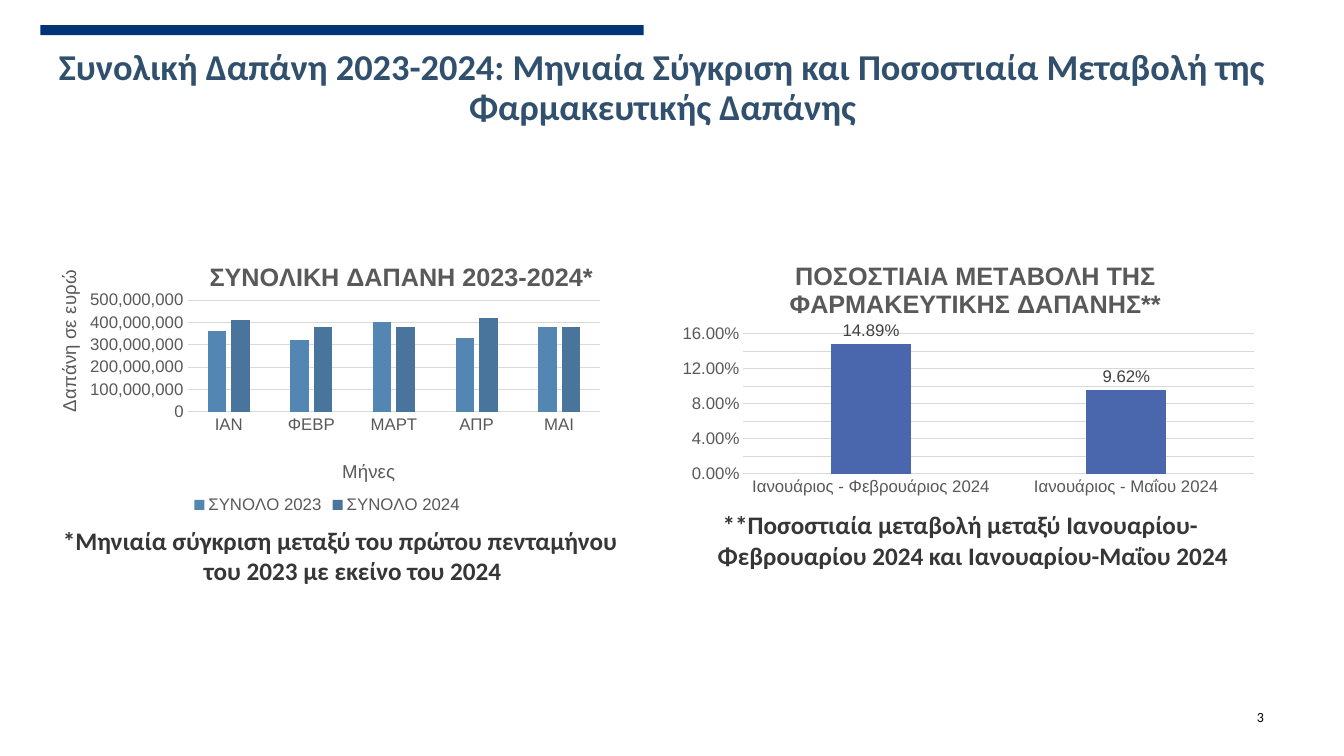
from lxml import etree
from pptx import Presentation
from pptx import util as u
from pptx.chart.data import CategoryChartData
from pptx.dml.color import RGBColor
from pptx.enum import chart as ch, shapes, text
from pptx.oxml import ns

GREY = "595959"
GRID = "D9D9D9"


def rgb(value):
    return RGBColor.from_string(value)


def apply(obj, values):
    for name, value in values.items():
        setattr(obj, name, value)


def set_layout(parent, x, y, w=None, h=None):
    for old in parent.findall(ns.qn("c:layout")):
        parent.remove(old)
    layout = etree.Element(ns.qn("c:layout"))
    manual = etree.SubElement(layout, ns.qn("c:manualLayout"))
    values = {"xMode": "edge", "yMode": "edge", "x": x, "y": y}
    if w is not None:
        values = {"layoutTarget": "inner", **values, "w": w, "h": h}
    for name, value in values.items():
        etree.SubElement(manual, ns.qn("c:" + name)).set("val", str(value))
    tx = parent.find(ns.qn("c:tx"))
    if tx is None:
        parent.insert(0, layout)
    else:
        tx.addnext(layout)


class Deck:
    def __init__(self, prs, layout):
        self.slide = prs.slides.add_slide(prs.slide_layouts[layout])

    def font(self, font, size, color=GREY, name="Arial", bold=False):
        apply(font, {"size": u.Pt(size), "name": name, "bold": bold})
        font.color.rgb = rgb(color)

    def bar(self, box, color):
        sp = self.slide.shapes.add_shape(shapes.MSO_SHAPE.RECTANGLE, *map(u.Pt, box))
        sp.shadow.inherit = False
        sp.fill.solid()
        sp.fill.fore_color.rgb = rgb(color)
        sp.line.fill.background()

    def fill_text(self, sp, box, content, size, color, bold=True, anchor="MIDDLE",
                  align="CENTER", spacing=1.0, hanging=False):
        apply(sp, dict(zip(("left", "top", "width", "height"), map(u.Pt, box))))
        tf = sp.text_frame
        apply(tf, {
            "word_wrap": True,
            "auto_size": text.MSO_AUTO_SIZE.NONE,
            "vertical_anchor": text.MSO_ANCHOR[anchor],
            "margin_left": u.Pt(8.6), "margin_right": u.Pt(7.2),
            "margin_top": u.Pt(3.6), "margin_bottom": u.Pt(3.6),
        })
        p = tf.paragraphs[0]
        apply(p, {"alignment": text.PP_ALIGN[align], "line_spacing": spacing,
                  "space_before": u.Pt(0)})
        if hanging:
            pPr = p._p.get_or_add_pPr()
            pPr.set("marL", str(u.Pt(36)))
            pPr.set("indent", str(u.Pt(-18)))
            etree.SubElement(pPr, ns.qn("a:buNone"))
        r = p.add_run()
        r.text = content
        self.font(r.font, size, color, "Calibri", bold)

    def title(self, box, content):
        self.fill_text(self.slide.shapes.title, box, content, 26, "31506D",
                       anchor="TOP", spacing=0.9)

    def note(self, idx, box, content):
        self.fill_text(self.slide.placeholders[idx], box, content, 18, "363636",
                       hanging=True)

    def label(self, box, content):
        sp = self.slide.shapes.add_textbox(*map(u.Pt, box))
        self.fill_text(sp, box, content, 10, "000000", bold=False, align="LEFT")

    def heading(self, title, content, size, place, bold=False, rotation=0):
        tf = title.text_frame
        tf.text = content
        self.font(tf.paragraphs[0].runs[0].font, size, bold=bold)
        tf._txBody.bodyPr.set("rot", str(rotation * 60000))
        tf._txBody.bodyPr.set("vert", "horz")
        set_layout(title._element, *place)

    def chart(self, box, cats, series, title, title_at, plot_at, top, step, fmt):
        data = CategoryChartData(number_format=fmt)
        data.categories = cats
        for name, values, _ in series:
            data.add_series(name, values)
        chart = self.slide.shapes.add_chart(
            ch.XL_CHART_TYPE.COLUMN_CLUSTERED, *map(u.Pt, box), data).chart
        self.font(chart.font, 12)
        chart.has_legend = False
        self.heading(chart.chart_title, title, 18, title_at, bold=True)
        set_layout(chart._chartSpace.chart.plotArea, *plot_at)
        plot = chart.plots[0]
        apply(plot, {"gap_width": 219, "overlap": -27, "vary_by_categories": False})
        for item, (_, _, color) in zip(plot.series, series):
            item.format.fill.solid()
            item.format.fill.fore_color.rgb = rgb(color)
        cat, val = chart.category_axis, chart.value_axis
        for axis in (cat, val):
            axis.major_tick_mark = axis.minor_tick_mark = ch.XL_TICK_MARK.NONE
            self.font(axis.tick_labels.font, 12)
        apply(val, {"minimum_scale": 0, "maximum_scale": top, "major_unit": step,
                    "has_major_gridlines": True})
        apply(val.tick_labels, {"number_format": fmt, "number_format_is_linked": False})
        val.format.line.fill.background()
        for line in (cat.format.line, val.major_gridlines.format.line):
            line.color.rgb = rgb(GRID)
            line.width = u.Pt(0.75)
        return chart

    def legend(self, chart):
        chart.has_legend = True
        apply(chart.legend, {"position": ch.XL_LEGEND_POSITION.BOTTOM,
                             "include_in_layout": False})
        self.font(chart.legend.font, 12)

    def value_labels(self, chart, fmt):
        plot = chart.plots[0]
        plot.has_data_labels = True
        labels = plot.data_labels
        apply(labels, {"show_value": True, "number_format": fmt,
                       "number_format_is_linked": False,
                       "position": ch.XL_LABEL_POSITION.OUTSIDE_END})
        self.font(labels.font, 12, "404040")


def main():
    prs = Presentation()
    apply(prs, {"slide_width": u.Pt(960), "slide_height": u.Pt(540)})
    s = Deck(prs, 3)
    s.bar((28.8, 18, 431, 7.2), "013476")
    s.title((26, 31.7, 893.5, 65.5),
            "Συνολική Δαπάνη 2023-2024: Μηνιαία Σύγκριση και "
            "Ποσοστιαία Μεταβολή της Φαρμακευτικής Δαπάνης")
    s.note(1, (5, 371.5, 456.5, 50),
           "*Μηνιαία σύγκριση μεταξύ του πρώτου πενταμήνου του 2023 με εκείνο του 2024")
    s.note(2, (448, 360.7, 456.5, 50),
           "**Ποσοστιαία μεταβολή μεταξύ Ιανουαρίου-Φεβρουαρίου 2024 "
           "και Ιανουαρίου-Μαΐου 2024")

    million = 10 ** 6
    spending = s.chart(
        (26, 170.6, 415.4, 199.4), ["ΙΑΝ", "ΦΕΒΡ", "ΜΑΡΤ", "ΑΠΡ", "ΜΑΙ"],
        [("ΣΥΝΟΛΟ 2023", [v * million for v in (360, 320, 400, 330, 380)], "5486B3"),
         ("ΣΥΝΟΛΟ 2024", [v * million for v in (410, 380, 380, 420, 380)], "49749B")],
        "ΣΥΝΟΛΙΚΗ ΔΑΠΑΝΗ 2023-2024*", (0.29, 0.06), (0.26, 0.22, 0.71, 0.4),
        500 * million, 100 * million, "#,##0")
    s.heading(spending.category_axis.axis_title, "Μήνες", 13.3, (0.52, 0.78))
    s.heading(spending.value_axis.axis_title, "Δαπάνη σε ευρώ", 13.3, (0.03, 0.1),
              rotation=-90)
    s.legend(spending)

    change = s.chart(
        (480.2, 170.6, 424, 188.6),
        ["Ιανουάριος - Φεβρουάριος 2024", "Ιανουάριος - Μαΐου 2024"],
        [("Ποσοστιαία μεταβολή", (0.1489, 0.0962), "4A66AC")],
        "ΠΟΣΟΣΤΙΑΙΑ ΜΕΤΑΒΟΛΗ ΤΗΣ ΦΑΡΜΑΚΕΥΤΙΚΗΣ ΔΑΠΑΝΗΣ**", (0.19, 0.06),
        (0.12, 0.36, 0.86, 0.53), 0.16, 0.02, "0.00%")
    s.value_labels(change, "0.00%")

    s.label((889.2, 501.8, 41, 20.2), "3")
    prs.save("out.pptx")


if __name__ == "__main__":
    main()
